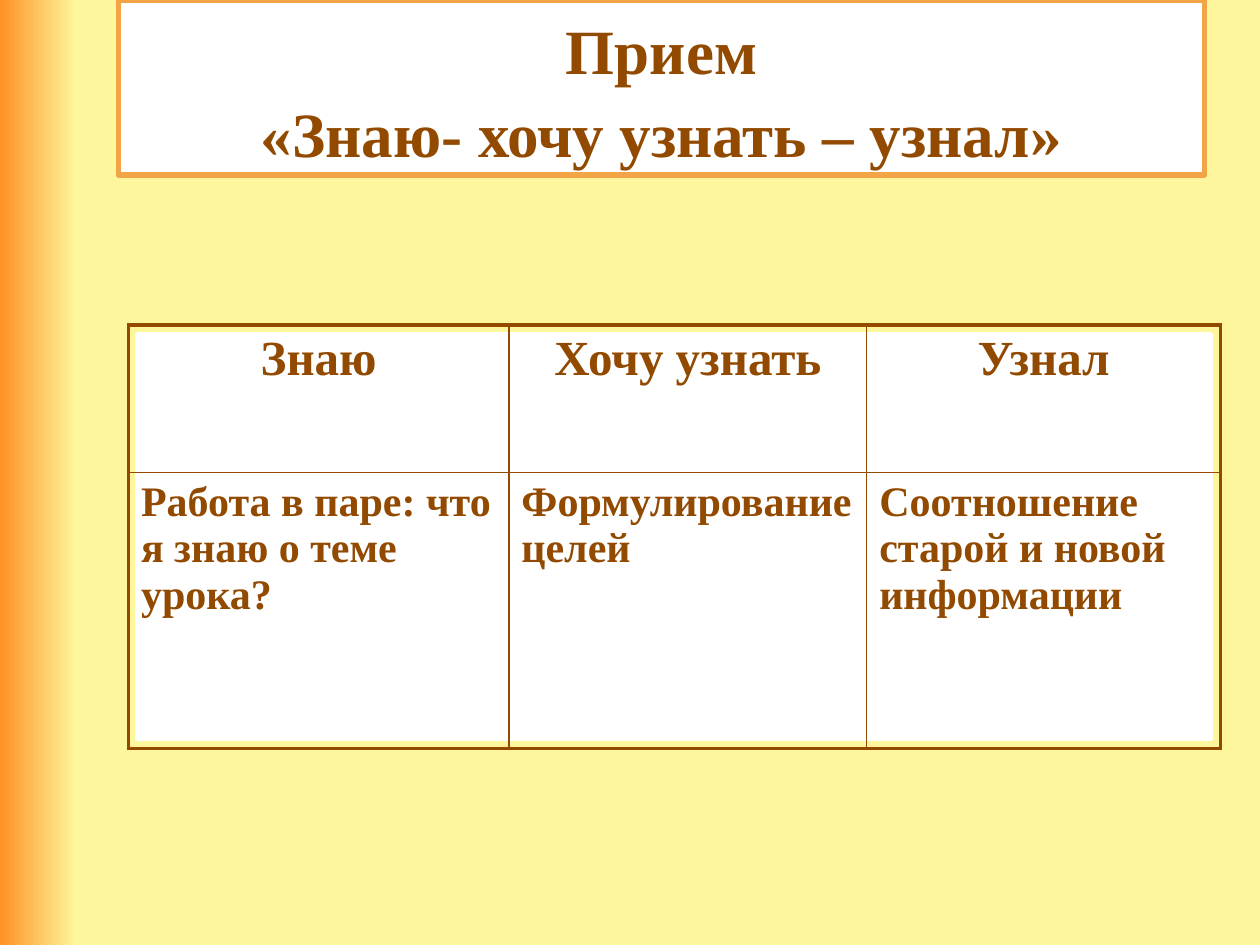
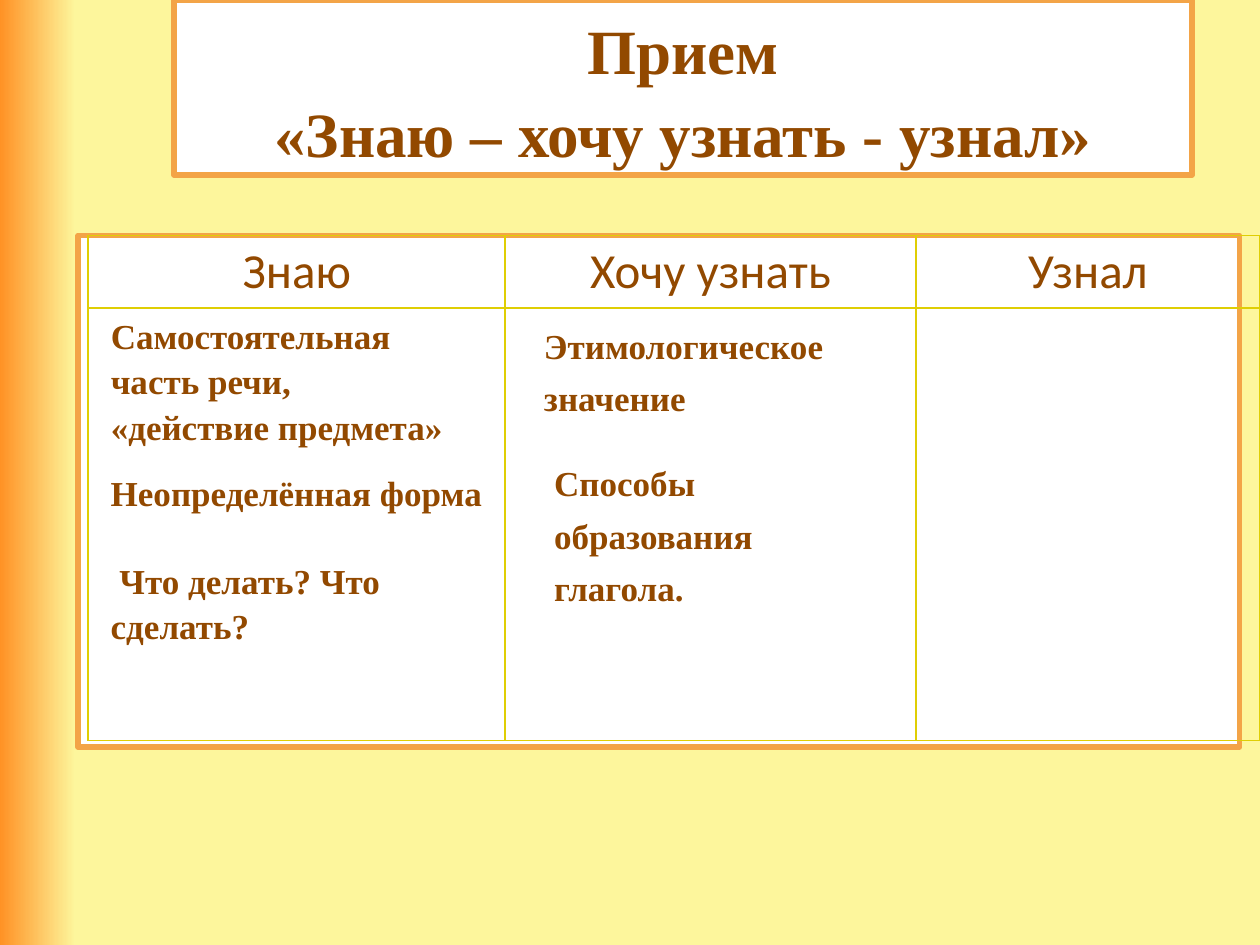
import pptx
import pptx.util
import pptx.dml.color
import pptx.enum.shapes
import pptx.enum.text
import pptx.oxml.ns
from lxml import etree

Pt = pptx.util.Pt
MSO = pptx.enum.shapes.MSO_SHAPE
ALIGN = pptx.enum.text.PP_ALIGN
ANCHOR = pptx.enum.text.MSO_ANCHOR

# Content: lengths in points, boxes as left, top, width, height
HEX = {"brown": "924900", "edge": "F3A447", "white": "FFFFFF",
       "gold": "DFCE04", "cream": "FDF69C", "flame": "FF9225"}
SERIF, SANS = "Times New Roman", "Calibri"
HEADS = ["Знаю", "Хочу узнать", "Узнал"]

SLIDES = [
    {"title": "Прием\v«Знаю- хочу узнать – узнал»",
     "band": (67.7, 0, 620.6, 100),
     "panel": (MSO.RECTANGLE, "white", (78.5, 191.5, 613.4, 230.4)),
     "grid": {"spot": (73.4, 185.8), "cols": [217.4, 204.5, 202.3],
              "rows": [84.2, 157.7], "ink": "brown", "outer": 2.25,
              "font": SERIF, "bold": True,
              "body": ["Работа в паре: что я знаю о теме урока?",
                       "Формулирование целей",
                       "Соотношение старой и новой информации"]},
     "notes": []},
    {"title": "Прием\v«Знаю – хочу узнать - узнал»",
     "band": (99.4, 0, 581.8, 100),
     "panel": (MSO.FLOWCHART_PROCESS, "edge", (44.6, 134.6, 663.8, 292.3)),
     "grid": {"spot": (50.4, 134.6), "cols": [238.3, 234.7, 196.6],
              "rows": [41, 247], "ink": "gold", "outer": 1,
              "font": SANS, "bold": False, "body": []},
     "notes": [
         ((56.2, 264.2, 230.4, 152.6), 24,
          ["Неопределённая форма", " Что делать? Что сделать?"]),
         ((56.2, 174.2, 215.3, 108.7), 0,
          ["Самостоятельная\vчасть речи,\v«действие предмета»"]),
         ((303.8, 180, 191.5, 60.5), 4, ["Этимологическое", "значение"]),
         ((309.6, 258.5, 196.6, 90), 4,
          ["Способы", "образования", "глагола."])]},
]


def tint(name):
    return pptx.dml.color.RGBColor.from_string(HEX[name])


def write(frame, *lines, size=20, font=SERIF, bold=True, align=ALIGN.LEFT,
          lead=None, gap=0):
    frame.word_wrap = True
    for i, line in enumerate(lines):
        para = frame.add_paragraph() if i else frame.paragraphs[0]
        para.text = line
        para.alignment = align
        para.space_before = Pt(gap if i else 0)
        if lead:
            para.line_spacing = lead
        for run in para.runs:
            run.font.size, run.font.name, run.font.bold = Pt(size), font, bold
            run.font.color.rgb = tint("brown")


def panel(slide, kind, edge, box):
    shape = slide.shapes.add_shape(kind, *map(Pt, box))
    shape.shadow.inherit = False
    shape.fill.solid()
    shape.fill.fore_color.rgb = tint("white")
    shape.line.color.rgb = tint(edge)
    shape.line.width = Pt(3.15)
    return shape


def border(cell, widths, ink):
    props = cell._tc.get_or_add_tcPr()
    qn = pptx.oxml.ns.qn
    for i, (side, width) in enumerate(widths.items()):
        line = etree.Element(qn("a:ln" + side), w=str(int(Pt(width))))
        fill = etree.SubElement(line, qn("a:solidFill"))
        etree.SubElement(fill, qn("a:srgbClr"), val=HEX[ink])
        props.insert(i, line)


def grid(slide, spot, cols, rows, ink, outer, font, bold, body):
    size = sum(cols), sum(rows)
    table = slide.shapes.add_table(
        len(rows), len(cols), *map(Pt, spot + size)).table
    table.first_row = table.horz_banding = False
    for col, width in zip(table.columns, cols):
        col.width = Pt(width)
    for row, height in zip(table.rows, rows):
        row.height = Pt(height)
    for r in range(len(rows)):
        for c in range(len(cols)):
            cell = table.cell(r, c)
            cell.fill.background()
            ends = {"L": c == 0, "R": c == len(cols) - 1,
                    "T": r == 0, "B": r == len(rows) - 1}
            border(cell, {s: outer if end else 1 for s, end in ends.items()}, ink)
    for c, head in enumerate(HEADS):
        write(table.cell(0, c).text_frame, head, size=28, font=font,
              bold=bold, align=ALIGN.CENTER)
    for c, text in enumerate(body):
        write(table.cell(1, c).text_frame, text, size=24, font=font, bold=bold)


def ground(slide):
    fill = slide.background.fill
    fill.gradient()
    fill.gradient_angle = 180
    for stop, (name, place) in zip(fill.gradient_stops,
                                   [("cream", 0.94), ("flame", 1)]):
        stop.color.rgb = tint(name)
        stop.position = place


def main():
    deck = pptx.Presentation()
    deck.slide_width, deck.slide_height = Pt(720), Pt(540)
    for item in SLIDES:
        slide = deck.slides.add_slide(deck.slide_layouts[6])
        ground(slide)
        panel(slide, *item["panel"])
        # Title band
        band = panel(slide, MSO.RECTANGLE, "edge", item["band"])
        band.text_frame.vertical_anchor = ANCHOR.MIDDLE
        write(band.text_frame, item["title"], size=36, align=ALIGN.CENTER,
              lead=1.1)
        grid(slide, **item["grid"])
        # Notes over the table
        for box, gap, lines in item["notes"]:
            note = slide.shapes.add_textbox(*map(Pt, box))
            write(note.text_frame, *lines, lead=1.08, gap=gap)
    deck.save("out.pptx")


if __name__ == "__main__":
    main()
